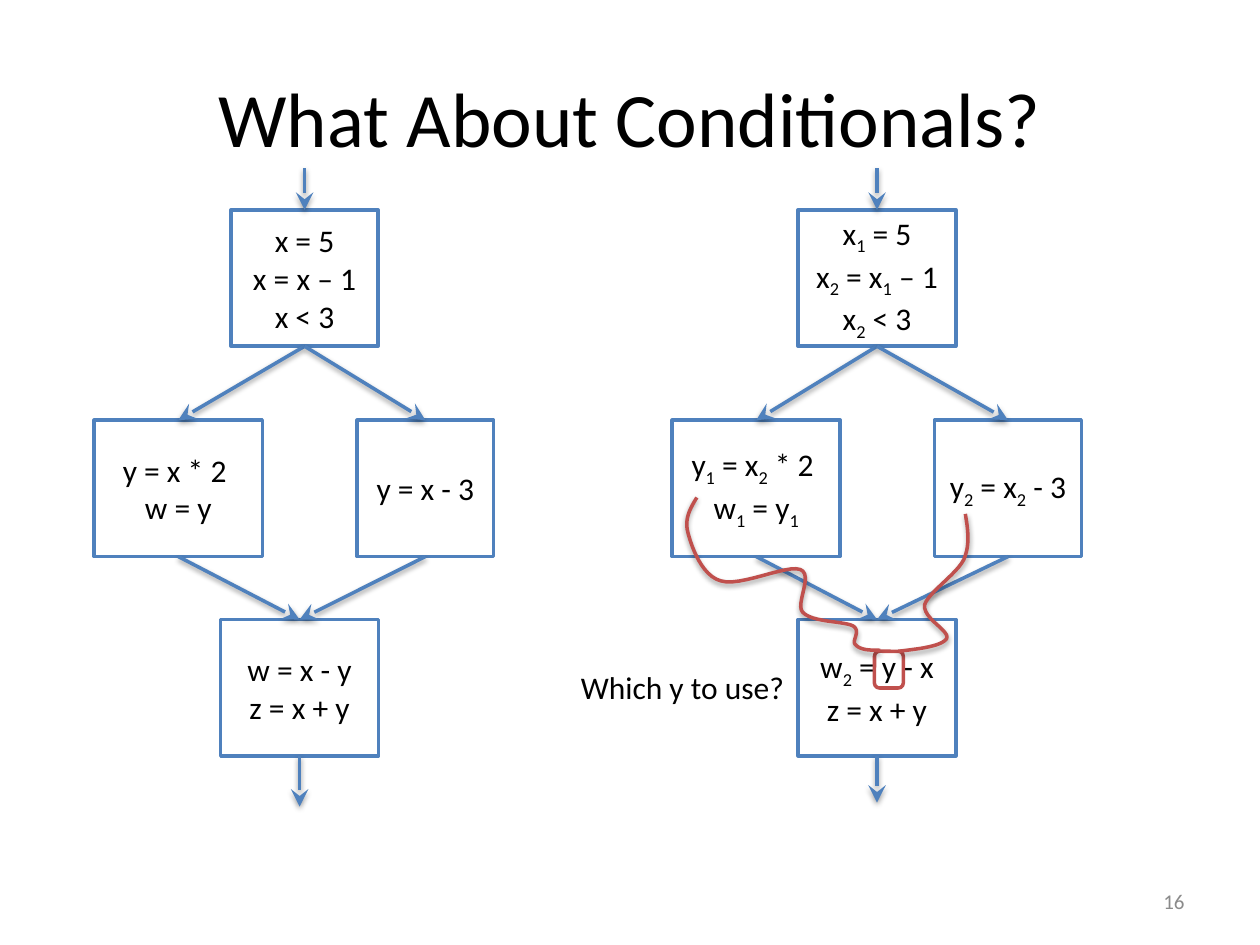
from dataclasses import dataclass

from lxml import etree
from pptx import Presentation
from pptx.dml.color import RGBColor
from pptx.enum.shapes import MSO_CONNECTOR, MSO_SHAPE
from pptx.enum.text import MSO_ANCHOR, PP_ALIGN
from pptx.oxml.ns import qn
from pptx.util import Cm, Pt

RECTANGLE = MSO_SHAPE.RECTANGLE
ROUNDED = MSO_SHAPE.ROUNDED_RECTANGLE
STRAIGHT = MSO_CONNECTOR.STRAIGHT
MIDDLE = MSO_ANCHOR.MIDDLE
LEFT, CENTER, RIGHT = PP_ALIGN.LEFT, PP_ALIGN.CENTER, PP_ALIGN.RIGHT
TOP_SIDE, BOTTOM_SIDE = 0, 2


@dataclass(frozen=True)
class Theme:
    font: str = "Calibri"
    ink: RGBColor = RGBColor(0, 0, 0)
    paper: RGBColor = RGBColor(255, 255, 255)
    flow: RGBColor = RGBColor(0x4F, 0x81, 0xBD)
    usage: RGBColor = RGBColor(0xC0, 0x50, 0x4D)
    muted: RGBColor = RGBColor(0x8B, 0x8B, 0x8B)
    title_size: int = 44
    body_size: int = 18
    number_size: int = 12
    line_width: int = 2


THEME = Theme()
ENTRY_TOP, BRANCH_TOP, MERGE_TOP = 4.23, 8.47, 12.49
BLOCK_HEIGHT = 2.75
ARROW_START = 3.39

PLAIN_GRAPH = {
    "entry": (4.66, ENTRY_TOP, 2.96, ["x = 5", "x = x – 1", "x < 3"]),
    "then": (1.9, BRANCH_TOP, 3.39, ["y = x * 2 ", "w = y"]),
    "else": (7.2, BRANCH_TOP, 2.75, ["y = x - 3"]),
    "merge": (4.45, MERGE_TOP, 3.18, ["w = x - y", "z = x + y"]),
}
SSA_GRAPH = {
    "entry": (16.09, ENTRY_TOP, 3.18, ["x_1 = 5", "x_2 = x_1 – 1", "x_2 < 3"]),
    "then": (13.55, BRANCH_TOP, 3.39, ["y_1 = x_2 * 2 ", "w_1 = y_1"]),
    "else": (18.84, BRANCH_TOP, 2.96, ["y_2 = x_2 - 3"]),
    "merge": (16.09, MERGE_TOP, 3.18, ["w_2 = y - x", "z = x + y"]),
}
EDGES = [("entry", "then"), ("entry", "else"), ("then", "merge"), ("else", "merge")]

ELSE_USAGE = [
    (18.11, 13.13), (18.54, 13.08), (18.97, 13.03), (19.08, 12.88),
    (19.18, 12.73), (18.59, 12.47), (18.64, 12.19),
    (18.72, 11.94), (19.28, 11.58), (19.43, 11.28),
    (19.56, 10.97), (19.51, 10.67), (19.46, 10.36),
]
THEN_USAGE = [
    (17.75, 13.11), (17.55, 13.11), (17.35, 13.11), (17.25, 13.0),
    (17.15, 12.93), (17.37, 12.73), (17.2, 12.62),
    (17.02, 12.52), (16.36, 12.55), (16.18, 12.34),
    (16.03, 12.17), (16.41, 11.58), (16.13, 11.48),
    (15.85, 11.38), (14.91, 11.84), (14.53, 11.71),
    (14.15, 11.61), (13.94, 11.02), (13.87, 10.74),
    (13.79, 10.46), (13.92, 10.24), (14.05, 10.03),
]


def format_run(run, size=THEME.body_size, color=THEME.ink):
    run.font.name = THEME.font
    run.font.size = Pt(size)
    run.font.color.rgb = color


def write_statement(paragraph, statement):
    paragraph.alignment = CENTER
    first, *indexed = statement.split("_")
    pieces = [(first, False)]
    for piece in indexed:
        pieces += [(piece[0], True), (piece[1:], False)]
    for text, is_index in pieces:
        if text:
            run = paragraph.add_run()
            run.text = text
            format_run(run)
            if is_index:
                run.font._element.set("baseline", "-25000")


def style_line(shape, color):
    shape.line.color.rgb = color
    shape.line.width = Pt(THEME.line_width)


def add_shadow(shape):
    properties = shape._element.spPr
    effects = etree.SubElement(properties, qn("a:effectLst"))
    shadow = etree.SubElement(effects, qn("a:outerShdw"), blurRad="40000",
                              dist="20000", dir="5400000", rotWithShape="0")
    color = etree.SubElement(shadow, qn("a:srgbClr"), val="000000")
    etree.SubElement(color, qn("a:alpha"), val="38000")


def add_block(slide, left, top, width, statements):
    block = slide.shapes.add_shape(RECTANGLE, Cm(left), Cm(top), Cm(width), Cm(BLOCK_HEIGHT))
    block.shadow.inherit = False
    block.fill.solid()
    block.fill.fore_color.rgb = THEME.paper
    style_line(block, THEME.flow)
    frame = block.text_frame
    frame.vertical_anchor = MIDDLE
    for index, statement in enumerate(statements):
        paragraph = frame.add_paragraph() if index else frame.paragraphs[0]
        write_statement(paragraph, statement)
    return block


def add_arrow(slide, start, end, source=None, target=None):
    arrow = slide.shapes.add_connector(STRAIGHT, *start, *end)
    if source is not None:
        arrow.begin_connect(source, BOTTOM_SIDE)
    if target is not None:
        arrow.end_connect(target, TOP_SIDE)
    style_line(arrow, THEME.flow)
    etree.SubElement(arrow.line._get_or_add_ln(), qn("a:tailEnd"),
                     type="stealth", w="lg", len="lg")
    add_shadow(arrow)


def top_middle(block):
    return block.left + block.width // 2, block.top


def bottom_middle(block):
    return block.left + block.width // 2, block.top + block.height


def add_flow_graph(slide, graph, exit_length):
    blocks = {role: add_block(slide, *layout) for role, layout in graph.items()}
    for source, target in EDGES:
        origin, goal = blocks[source], blocks[target]
        add_arrow(slide, bottom_middle(origin), top_middle(goal), origin, goal)
    entry, merge = blocks["entry"], blocks["merge"]
    entry_x, entry_y = top_middle(entry)
    add_arrow(slide, (entry_x, Cm(ARROW_START)), (entry_x, entry_y), target=entry)
    exit_x, exit_y = bottom_middle(merge)
    add_arrow(slide, (exit_x, exit_y), (exit_x, exit_y + Cm(exit_length)), source=merge)


def bezier_point(controls, t):
    weights = ((1 - t) ** 3, 3 * t * (1 - t) ** 2, 3 * t ** 2 * (1 - t), t ** 3)
    return tuple(Cm(sum(w * value for w, value in zip(weights, axis)))
                 for axis in zip(*controls))


def add_usage_curve(slide, controls, steps=12):
    points = [bezier_point(controls[start:start + 4], step / steps)
              for start in range(0, len(controls) - 1, 3)
              for step in range(1, steps + 1)]
    builder = slide.shapes.build_freeform(Cm(controls[0][0]), Cm(controls[0][1]))
    builder.add_line_segments(points, close=False)
    curve = builder.convert_to_shape()
    curve.fill.background()
    style_line(curve, THEME.usage)
    add_shadow(curve)


def add_usage_marker(slide):
    marker = slide.shapes.add_shape(ROUNDED, Cm(17.63), Cm(13.13), Cm(0.58), Cm(0.74))
    marker.shadow.inherit = False
    marker.fill.background()
    style_line(marker, THEME.usage)


def add_label(slide, text, box, size, color, align, wrap):
    label = slide.shapes.add_textbox(*map(Cm, box))
    frame = label.text_frame
    frame.word_wrap = wrap
    frame.vertical_anchor = MIDDLE
    frame.text = text
    frame.paragraphs[0].alignment = align
    format_run(frame.paragraphs[0].runs[0], size, color)


def set_title(slide, text):
    title = slide.shapes.title
    title.left, title.top, title.width, title.height = map(Cm, (1.27, 0.76, 22.86, 3.18))
    frame = title.text_frame
    frame.text = text
    frame.vertical_anchor = MIDDLE
    frame.paragraphs[0].alignment = CENTER
    format_run(frame.paragraphs[0].runs[0], THEME.title_size)


def main():
    deck = Presentation()
    deck.slide_width, deck.slide_height = Cm(25.4), Cm(19.05)
    slide = deck.slides.add_slide(deck.slide_layouts[5])
    set_title(slide, "What About Conditionals?")
    add_flow_graph(slide, SSA_GRAPH, exit_length=0.94)
    add_flow_graph(slide, PLAIN_GRAPH, exit_length=1.02)
    add_usage_marker(slide)
    add_usage_curve(slide, ELSE_USAGE)
    add_usage_curve(slide, THEN_USAGE)
    add_label(slide, "Which y to use?", (11.46, 13.34, 4.6, 1.02),
              THEME.body_size, THEME.ink, LEFT, wrap=False)
    add_label(slide, "16", (18.2, 17.66, 5.93, 1.01),
              THEME.number_size, THEME.muted, RIGHT, wrap=True)
    deck.save("out.pptx")


if __name__ == "__main__":
    main()
